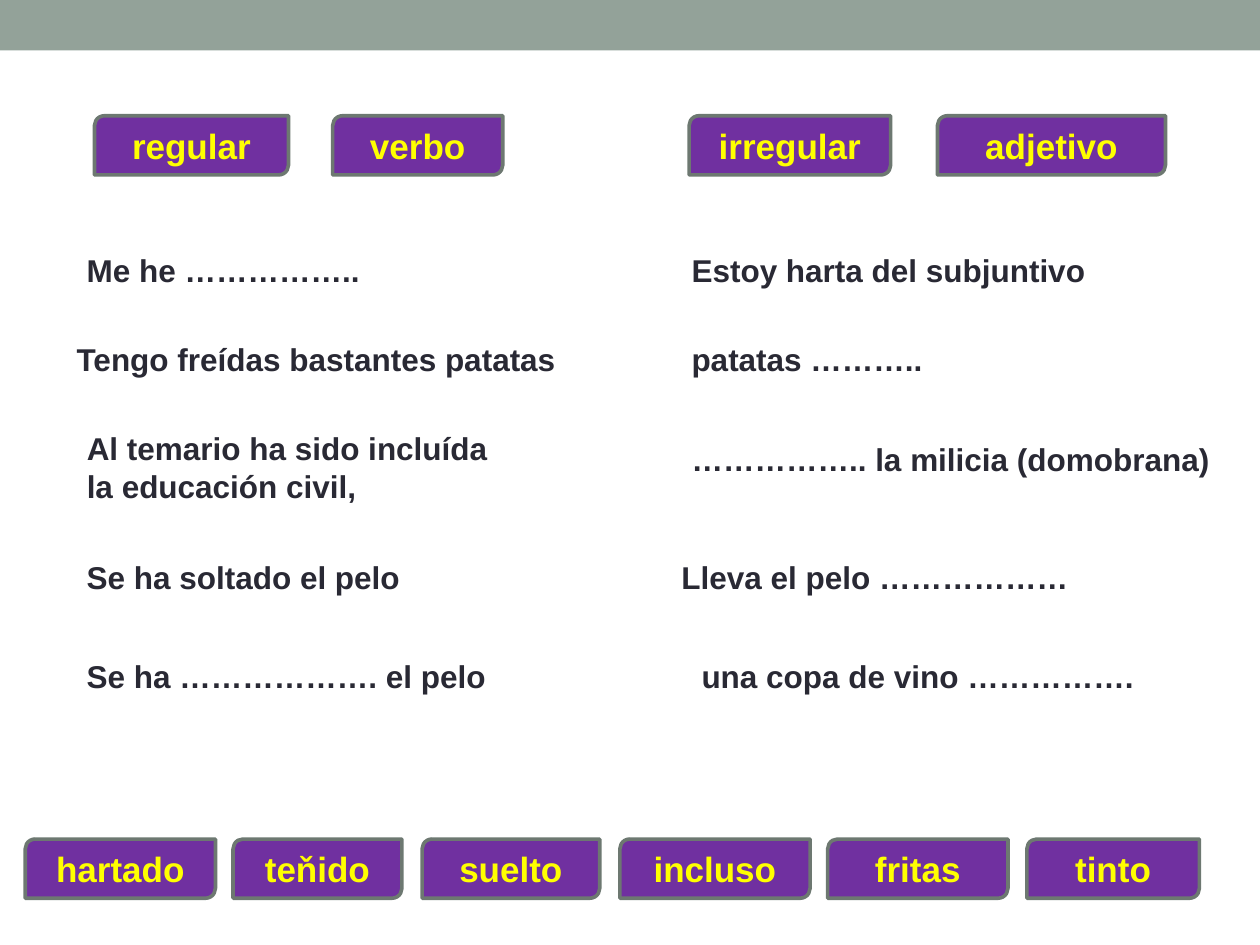
"""Build a Spanish participle exercise slide with word tags and gap sentences."""
from pptx import Presentation
from pptx.dml.color import RGBColor
from pptx.enum.shapes import MSO_SHAPE
from pptx.enum.text import MSO_ANCHOR, PP_ALIGN
from pptx.util import Pt

RECTANGLE = MSO_SHAPE.RECTANGLE
TAG_SHAPE = MSO_SHAPE.ROUND_2_DIAG_RECTANGLE
TOP, MIDDLE = MSO_ANCHOR.TOP, MSO_ANCHOR.MIDDLE
LEFT, CENTER = PP_ALIGN.LEFT, PP_ALIGN.CENTER

SAGE = RGBColor(0x93, 0xA2, 0x99)
PURPLE = RGBColor(0x70, 0x30, 0xA0)
GREY = RGBColor(0x6D, 0x78, 0x71)
YELLOW = RGBColor(0xFF, 0xFF, 0x00)
DARK = RGBColor(0x29, 0x29, 0x34)

SLIDE_WIDTH, SLIDE_HEIGHT = 720, 540
BAND_HEIGHT = 28.8
TAG_HEIGHT = 33.8
LINE_HEIGHT = 21.6
TEXT_PADDING = 7.2

CATEGORY_TOP = 66.2
CATEGORY_TAGS = [
    ("regular", 54, 110.9),
    ("verbo", 190.1, 97.2),
    ("irregular", 393.8, 115.2),
    ("adjetivo", 535.7, 130.3),
]
ANSWER_TOP = 479.5
ANSWER_TAGS = [
    ("hartado", 14.4, 108.7),
    ("teňido", 133.2, 96.5),
    ("suelto", 241.2, 101.5),
    ("incluso", 354.2, 108.7),
    ("fritas", 473, 103),
    ("tinto", 586.8, 98.6),
]
SENTENCES = [
    ("Me he ……………..", 42.5, 139.7, 184.3),
    ("Estoy harta del subjuntivo", 388.1, 139.7, 265),
    ("Tengo freídas bastantes patatas", 36.7, 190.8, 294.5),
    ("patatas ………..", 388.1, 190.8, 193),
    ("Al temario ha sido incluída\nla educación civil,", 42.5, 241.9, 294.5),
    ("…………….. la milicia (domobrana)", 388.1, 247.7, 317.5),
    ("Se ha soltado el pelo", 42.5, 315.4, 221),
    ("Lleva el pelo ………………", 382.3, 315.4, 289.4),
    ("Se ha ………………. el pelo", 42.5, 372.2, 254.9),
    ("una copa de vino …………….", 393.8, 372.2, 306),
]


def write_text(shape, text, size, color, alignment=LEFT, anchor=TOP):
    """Fill a shape with bold Arial text, one paragraph per line."""
    frame = shape.text_frame
    frame.word_wrap = True
    frame.vertical_anchor = anchor
    frame.text = text
    for paragraph in frame.paragraphs:
        paragraph.alignment = alignment
        for run in paragraph.runs:
            run.font.name = "Arial"
            run.font.size = Pt(size)
            run.font.bold = True
            run.font.color.rgb = color


def add_filled_shape(slide, preset, left, top, width, height, fill):
    """Add a flat shape without outline or shadow."""
    shape = slide.shapes.add_shape(preset, Pt(left), Pt(top), Pt(width), Pt(height))
    shape.shadow.inherit = False
    shape.fill.solid()
    shape.fill.fore_color.rgb = fill
    shape.line.fill.background()
    return shape


def add_tag(slide, word, left, top, width):
    """Add a purple word tag."""
    tag = add_filled_shape(slide, TAG_SHAPE, left, top, width, TAG_HEIGHT, PURPLE)
    tag.line.color.rgb = GREY
    tag.line.width = Pt(2.08)
    write_text(tag, word, 20, YELLOW, alignment=CENTER, anchor=MIDDLE)


def add_sentence(slide, text, left, top, width):
    """Add a sentence box as high as its lines need."""
    height = len(text.splitlines()) * LINE_HEIGHT + TEXT_PADDING
    box = slide.shapes.add_textbox(Pt(left), Pt(top), Pt(width), Pt(height))
    write_text(box, text, 18, DARK)


def main():
    """Build and save the slide."""
    presentation = Presentation()
    presentation.slide_width = Pt(SLIDE_WIDTH)
    presentation.slide_height = Pt(SLIDE_HEIGHT)
    slide = presentation.slides.add_slide(presentation.slide_layouts[6])

    add_filled_shape(slide, RECTANGLE, 0, 0, SLIDE_WIDTH, BAND_HEIGHT, SAGE)
    for text, left, top, width in SENTENCES:
        add_sentence(slide, text, left, top, width)
    for top, tags in ((CATEGORY_TOP, CATEGORY_TAGS), (ANSWER_TOP, ANSWER_TAGS)):
        for word, left, width in tags:
            add_tag(slide, word, left, top, width)

    presentation.save("out.pptx")


if __name__ == "__main__":
    main()
